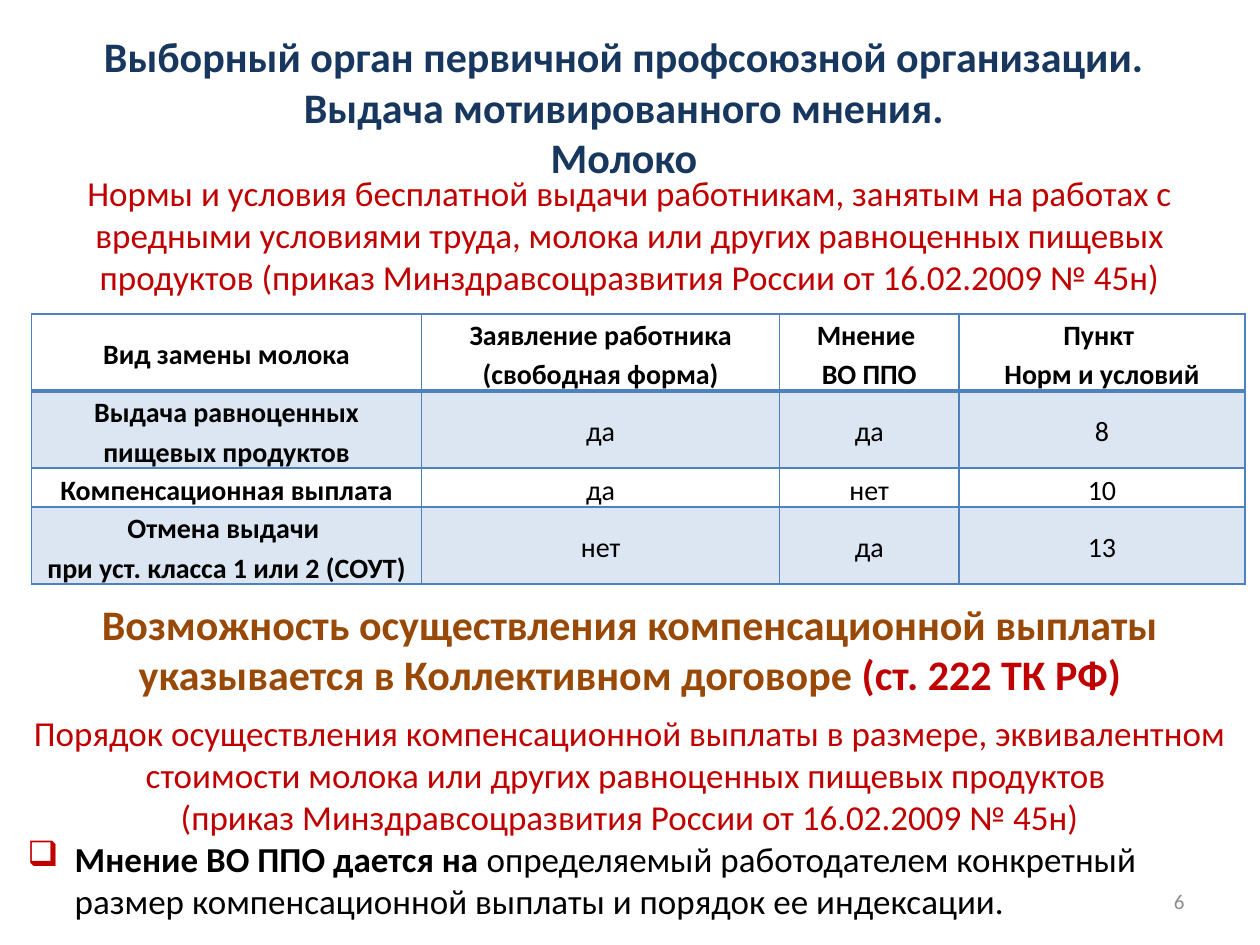
"""Build a slide on milk replacement rules and the union body's opinion."""
from dataclasses import dataclass

from lxml import etree
from pptx import Presentation
from pptx.dml.color import RGBColor as Rgb
from pptx.enum import text as t
from pptx.oxml import ns
from pptx.util import Pt


@dataclass(frozen=True)
class Theme:
    face: str = "Calibri"
    navy: str = "17375E"
    red: str = "C00000"
    brown: str = "984807"
    black: str = "000000"
    gray: str = "8C8C8C"
    line: str = "4F81BD"
    band: str = "DCE6F2"
    head: int = 24
    body: int = 20
    cell: int = 16
    note: int = 12


look = Theme()


def style(para, size, color, bold=False, align=t.PP_ALIGN.CENTER):
    para.alignment = align
    font = para.font
    font.name, font.size, font.bold = look.face, Pt(size), bold
    font.color.rgb = Rgb.from_string(color)


def edge(cell, side, width):
    props = cell._tc.get_or_add_tcPr()
    line = etree.SubElement(props, ns.qn(f"a:ln{side}"), w=str(Pt(width)))
    fill = etree.SubElement(line, ns.qn("a:solidFill"))
    etree.SubElement(fill, ns.qn("a:srgbClr"), val=look.line)


deck = Presentation()
deck.slide_width, deck.slide_height = Pt(720), Pt(540)
slide = deck.slides.add_slide(deck.slide_layouts[5])

title = slide.shapes.title
title.left, title.top, title.width, title.height = Pt(18), Pt(14), Pt(677), Pt(94)
frame = title.text_frame
frame.text = ("Выборный орган первичной профсоюзной организации.\n"
              "Выдача мотивированного мнения.\nМолоко")
frame.auto_size = t.MSO_AUTO_SIZE.NONE
frame.vertical_anchor = t.MSO_ANCHOR.TOP
for para in frame.paragraphs:
    style(para, look.head, look.navy, True)

order = "(приказ Минздравсоцразвития России от 16.02.2009 № 45н)"
parts = [
    ("Нормы и условия бесплатной выдачи работникам, занятым на работах с вредными "
     f"условиями труда, молока или других равноценных пищевых продуктов {order}",
     look.body, look.red, False, 0),
    ("Возможность осуществления компенсационной выплаты указывается "
     "в Коллективном договоре ", look.head, look.brown, True, 172),
    ("Порядок осуществления компенсационной выплаты в размере, эквивалентном "
     f"стоимости молока или других равноценных пищевых продуктов \n{order}",
     look.body, look.red, False, 7),
    ("Мнение ВО ППО дается на ", look.body, look.black, False, 0),
]
box = slide.shapes.add_textbox(Pt(8.6), Pt(94.3), Pt(702.7), Pt(440))
frame = box.text_frame
frame.word_wrap = True
for i, (words, size, color, bold, gap) in enumerate(parts):
    para = frame.paragraphs[0] if i == 0 else frame.add_paragraph()
    para.text = words
    style(para, size, color, bold)
    para.space_before = Pt(gap)

law = frame.paragraphs[1].add_run()
law.text = "(ст. 222 ТК РФ)"
law.font.color.rgb = Rgb.from_string(look.red)

point = frame.paragraphs[3]
point.alignment = t.PP_ALIGN.LEFT
point.runs[0].font.bold = True
point.add_run().text = ("определяемый работодателем конкретный размер "
                        "компенсационной выплаты и порядок ее индексации.")
props = point._p.get_or_add_pPr()
props.set("marL", str(Pt(27)))
props.set("indent", str(Pt(-27)))
tint = etree.Element(ns.qn("a:buClr"))
etree.SubElement(tint, ns.qn("a:srgbClr"), val=look.red)
mark = etree.Element(ns.qn("a:buChar"), char="❑")
base = props.find(ns.qn("a:defRPr"))
base.addprevious(tint)
base.addprevious(mark)

rows = [
    ("Вид замены молока", "Заявление работника (свободная форма)",
     "Мнение \vВО ППО", "Пункт \vНорм и условий"),
    ("Выдача равноценных пищевых продуктов", "да", "да", "8"),
    ("Компенсационная выплата", "да", "нет", "10"),
    ("Отмена выдачи \vпри уст. класса 1 или 2 (СОУТ)", "нет", "да", "13"),
]
wide = [223, 204.5, 102.5, 163.5]
high = [44, 44, 22, 44]
table = slide.shapes.add_table(4, 4, Pt(18), Pt(179.3), Pt(sum(wide)),
                               Pt(sum(high))).table
table.first_row = table.horz_banding = False
for col, width in zip(table.columns, wide):
    col.width = Pt(width)
for r, (row, height) in enumerate(zip(rows, high)):
    table.rows[r].height = Pt(height)
    for c, words in enumerate(row):
        cell = table.cell(r, c)
        cell.margin_left = cell.margin_right = Pt(5)
        cell.margin_top = cell.margin_bottom = 0
        cell.vertical_anchor = t.MSO_ANCHOR.MIDDLE
        para = cell.text_frame.paragraphs[0]
        para.text = words
        para.line_spacing = 1.15
        style(para, look.cell, look.black, r == 0 or c == 0)
        for side in "LRTB":
            thick = (r, side) in [(0, "B"), (1, "T")]
            edge(cell, side, 2 if thick else 1)
        if r % 2:
            cell.fill.solid()
            cell.fill.fore_color.rgb = Rgb.from_string(look.band)
        else:
            cell.fill.background()

page = slide.shapes.add_textbox(Pt(516), Pt(500.5), Pt(168), Pt(29)).text_frame
page.word_wrap = True
page.vertical_anchor = t.MSO_ANCHOR.MIDDLE
page.text = "6"
style(page.paragraphs[0], look.note, look.gray, align=t.PP_ALIGN.RIGHT)

deck.save("out.pptx")
